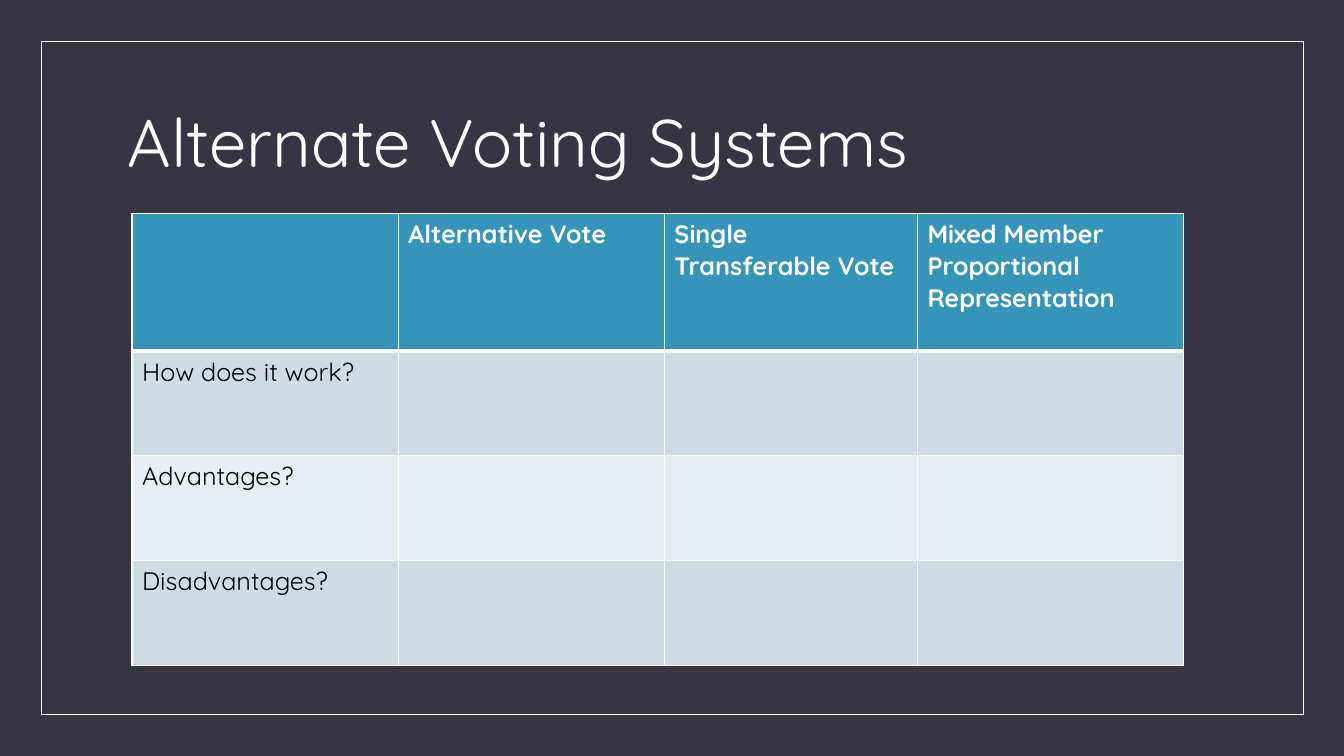
from lxml import etree
from pptx import Presentation
from pptx.dml.color import RGBColor
from pptx.enum.shapes import MSO_SHAPE
from pptx.enum.text import MSO_ANCHOR
from pptx.oxml.ns import qn
from pptx.util import Inches, Pt

RECTANGLE = MSO_SHAPE.RECTANGLE
MIDDLE = MSO_ANCHOR.MIDDLE

NIGHT = RGBColor(0x37, 0x35, 0x45)
WHITE = RGBColor(0xFF, 0xFF, 0xFF)
BLACK = RGBColor(0x00, 0x00, 0x00)
HEADER_BLUE = RGBColor(0x34, 0x94, 0xBA)
BAND_DARK = RGBColor(0xCE, 0xDC, 0xE7)
BAND_LIGHT = RGBColor(0xE8, 0xEE, 0xF3)

FONT = "Quicksand"
SYSTEMS = ["", "Alternative Vote", "Single Transferable Vote",
           "Mixed Member Proportional Representation"]
QUESTIONS = ["How does it work?", "Advantages?", "Disadvantages?"]
COLUMN_WIDTHS = [2.64, 2.64, 2.51, 2.64]
HEADER_HEIGHT = 1.36
ROW_HEIGHT = 1.04


def add_run(paragraph, text, size, color, bold=False):
    """Add one formatted run to a paragraph."""
    run = paragraph.add_run()
    run.text = text
    run.font.name = FONT
    run.font.size = Pt(size)
    run.font.bold = bold
    run.font.color.rgb = color


def add_frame(slide):
    """Draw the thin white frame around the slide."""
    frame = slide.shapes.add_shape(
        RECTANGLE, Inches(0.41), Inches(0.41), Inches(12.52), Inches(6.68))
    frame.shadow.inherit = False
    frame.fill.background()
    frame.line.color.rgb = WHITE
    frame.line.width = Pt(0.5)


def add_title(slide, text):
    """Add the slide title."""
    box = slide.shapes.add_textbox(
        Inches(1.17), Inches(0.7), Inches(11), Inches(1.5))
    text_frame = box.text_frame
    text_frame.word_wrap = True
    text_frame.vertical_anchor = MIDDLE
    paragraph = text_frame.paragraphs[0]
    paragraph.line_spacing = 0.9
    add_run(paragraph, text, 48, WHITE)


def set_borders(cell, widths):
    """Give a cell white borders, with widths in points by side."""
    properties = cell._tc.get_or_add_tcPr()
    for side in "LRTB":
        line = etree.SubElement(
            properties, qn(f"a:ln{side}"), w=str(Pt(widths[side])))
        fill = etree.SubElement(line, qn("a:solidFill"))
        etree.SubElement(fill, qn("a:srgbClr"), val=str(WHITE))


def style_cell(cell, text, row):
    """Fill, border and write one table cell according to its row."""
    is_header = row == 0
    set_borders(cell, {"L": 1, "R": 1, "T": 3 if row == 1 else 1,
                       "B": 3 if is_header else 1})
    cell.fill.solid()
    if is_header:
        cell.fill.fore_color.rgb = HEADER_BLUE
    else:
        cell.fill.fore_color.rgb = BAND_DARK if row % 2 else BAND_LIGHT
    if text:
        add_run(cell.text_frame.paragraphs[0], text, 18,
                WHITE if is_header else BLACK, is_header)


def add_comparison_table(slide):
    """Add the table of voting systems against questions."""
    rows = [SYSTEMS] + [[question, "", "", ""] for question in QUESTIONS]
    height = HEADER_HEIGHT + ROW_HEIGHT * len(QUESTIONS)
    table = slide.shapes.add_table(
        len(rows), len(SYSTEMS), Inches(1.31), Inches(2.12),
        Inches(sum(COLUMN_WIDTHS)), Inches(height)).table
    table.horz_banding = False
    for column, width in zip(table.columns, COLUMN_WIDTHS):
        column.width = Inches(width)
    for row, texts in enumerate(rows):
        table.rows[row].height = Inches(ROW_HEIGHT if row else HEADER_HEIGHT)
        for column, text in enumerate(texts):
            style_cell(table.cell(row, column), text, row)


def main():
    """Build the slide and save it."""
    presentation = Presentation()
    presentation.slide_width = Inches(13.33)
    presentation.slide_height = Inches(7.5)
    slide = presentation.slides.add_slide(presentation.slide_layouts[6])
    slide.background.fill.solid()
    slide.background.fill.fore_color.rgb = NIGHT
    add_frame(slide)
    add_title(slide, "Alternate Voting Systems")
    add_comparison_table(slide)
    presentation.save("out.pptx")


if __name__ == "__main__":
    main()
